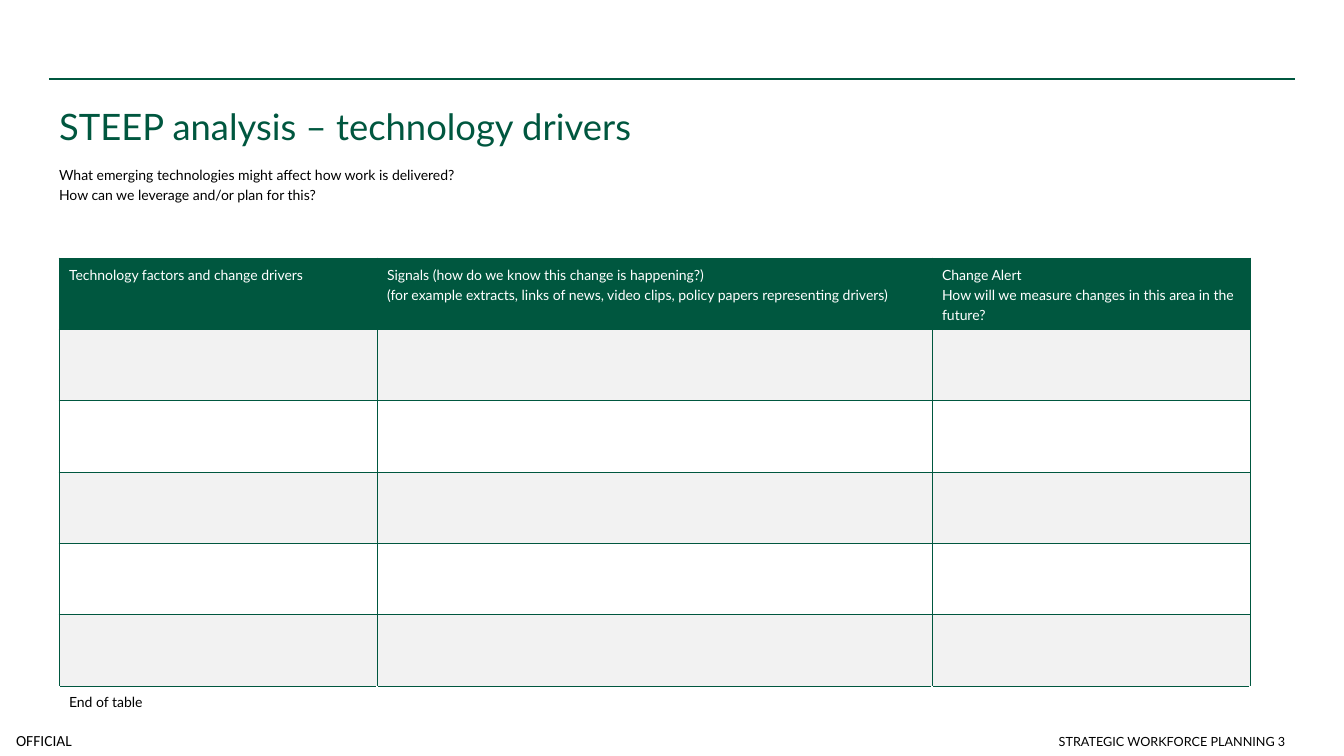
import pptx
import pptx.util
import pptx.dml.color
import pptx.enum.shapes
import pptx.enum.text
import pptx.oxml.ns
import lxml.etree

GREEN = pptx.dml.color.RGBColor(0x00, 0x57, 0x3F)
BLACK = pptx.dml.color.RGBColor(0x00, 0x00, 0x00)
WHITE = pptx.dml.color.RGBColor(0xFF, 0xFF, 0xFF)
GREY = pptx.dml.color.RGBColor(0xF2, 0xF2, 0xF2)
qn = pptx.oxml.ns.qn


def px(length):
    return pptx.util.Emu(round(length * 914400 / 100.8))


def write(text_frame, text, size, color, font="Lato", spacing=1.2, align="LEFT"):
    text_frame.text = text
    text_frame.word_wrap = True
    for paragraph in text_frame.paragraphs:
        paragraph.alignment = getattr(pptx.enum.text.PP_ALIGN, align)
        paragraph.line_spacing = spacing
        paragraph.space_before = pptx.util.Pt(0)
        for run in paragraph.runs:
            run.font.name = font
            run.font.size = pptx.util.Pt(size)
            run.font.color.rgb = color


presentation = pptx.Presentation()
presentation.slide_width = px(1344)
presentation.slide_height = px(756)
slide = presentation.slides.add_slide(presentation.slide_layouts[1])

# Rule across the top
rule = slide.shapes.add_connector(
    pptx.enum.shapes.MSO_CONNECTOR.STRAIGHT, px(49), px(79), px(1295), px(79))
rule.line.color.rgb = GREEN
rule.line.width = pptx.util.Pt(1)
lxml.etree.SubElement(rule._element.spPr, qn("a:effectLst"))

# Title and questions
title, questions = slide.placeholders
for shape, top, height in ((title, 90, 103), (questions, 158, 99)):
    shape.left, shape.top, shape.width, shape.height = px(49), px(top), px(1246), px(height)
    shape.text_frame.vertical_anchor = pptx.enum.text.MSO_ANCHOR.TOP
    shape.text_frame.auto_size = pptx.enum.text.MSO_AUTO_SIZE.NONE
write(title.text_frame, "STEEP analysis – technology drivers", 26, GREEN)
write(questions.text_frame,
      "What emerging technologies might affect how work is delivered?\n"
      "How can we leverage and/or plan for this?", 10, BLACK)
for paragraph in questions.text_frame.paragraphs:
    properties = paragraph._p.get_or_add_pPr()
    properties.set("marL", "0")
    properties.set("indent", "0")
    lxml.etree.SubElement(properties, qn("a:buNone"))

# Drivers table: header, five empty rows, closing row
headings = (
    "Technology factors and change drivers",
    "Signals (how do we know this change is happening?)\n"
    "(for example extracts, links of news, video clips, policy papers representing drivers)",
    "Change Alert\nHow will we measure changes in this area in the future?",
)
table = slide.shapes.add_table(7, 3, px(59), px(258), px(1191), px(467)).table
table.first_row = False
table.horz_banding = False
for column, width in zip(table.columns, (318, 555, 318)):
    column.width = px(width)
for row in table.rows:
    row.height = px(428) // 6
table.rows[6].height = px(39)

for row_index, row in enumerate(table.rows):
    for column_index, cell in enumerate(row.cells):
        cell.margin_top = cell.margin_bottom = px(5 if row_index == 0 else 0)
        if row_index == 0:
            write(cell.text_frame, headings[column_index], 10, WHITE)
        elif row_index == 6 and column_index == 0:
            cell.margin_top = px(5)
            write(cell.text_frame, "End of table", 10, BLACK)

        # Borders go before the fill in the cell properties
        sides = ("lnT",) if row_index == 6 else ("lnL", "lnR", "lnT", "lnB")
        for side in sides:
            border = lxml.etree.SubElement(
                cell._tc.get_or_add_tcPr(), qn("a:" + side), w="6350")
            fill = lxml.etree.SubElement(border, qn("a:solidFill"))
            lxml.etree.SubElement(fill, qn("a:srgbClr"), val=str(GREEN))
        cell.fill.solid()
        cell.fill.fore_color.rgb = GREEN if row_index == 0 else GREY if row_index % 2 else WHITE

# Classification and footer
marking = slide.shapes.add_textbox(px(0), px(725), px(88), px(31)).text_frame
marking.margin_left = marking.margin_right = marking.margin_top = marking.margin_bottom = 0
marking.vertical_anchor = pptx.enum.text.MSO_ANCHOR.MIDDLE
write(marking, "OFFICIAL", 11, BLACK, "Calibri", 1.0, "CENTER")

footer = slide.shapes.add_textbox(px(689), px(715), px(606), px(39)).text_frame
footer.vertical_anchor = pptx.enum.text.MSO_ANCHOR.BOTTOM
write(footer, "STRATEGIC WORKFORCE PLANNING 3", 9, BLACK, spacing=1.0, align="RIGHT")

presentation.save("out.pptx")
